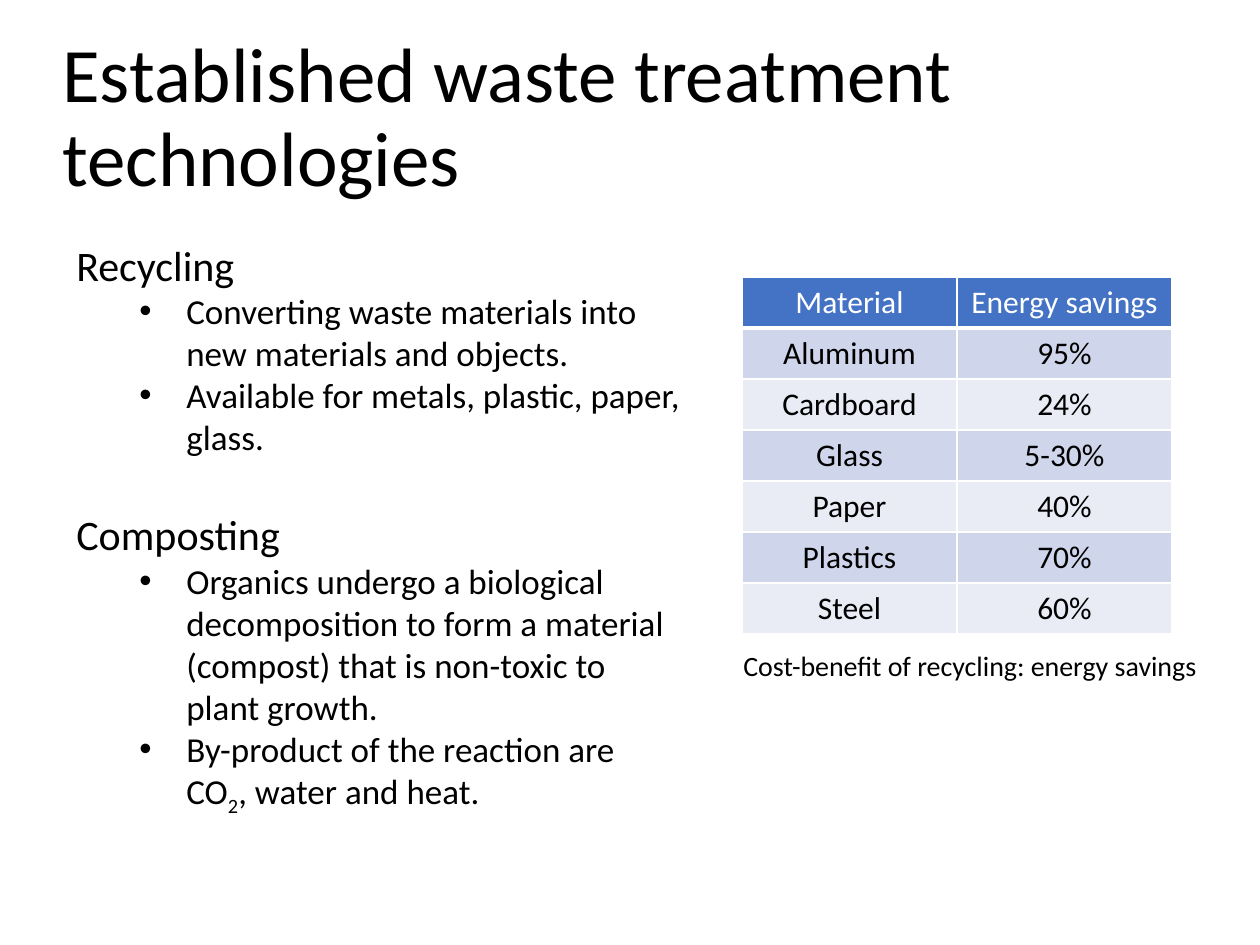
"""Build the slide on established waste treatment technologies."""
from dataclasses import dataclass

from lxml.etree import SubElement
from pptx import Presentation
from pptx.dml.color import RGBColor
from pptx.enum.text import MSO_ANCHOR, PP_ALIGN
from pptx.oxml.ns import qn
from pptx.util import Pt

EMU_PER_PIXEL = 914400 / 126


def px(length):
    return round(length * EMU_PER_PIXEL)


@dataclass(frozen=True)
class Theme:
    font: str = "Calibri"
    text: str = "000000"
    inverse: str = "FFFFFF"
    header: str = "4472C4"
    bands: tuple = ("CFD5EA", "E9EBF5")
    title_size: int = 44
    heading_size: int = 24
    bullet_size: int = 20
    table_size: int = 18
    caption_size: int = 16
    line_spacing: float = 0.9
    section_gap: float = 29.3


class SlideBuilder:
    def __init__(self, slide, theme):
        self.slide = slide
        self.theme = theme

    def style(self, paragraph, size, color=None):
        font = paragraph.font
        font.name = self.theme.font
        font.size = Pt(size)
        font.bold = False
        font.color.rgb = RGBColor.from_string(color or self.theme.text)

    def text_frame(self, left, top, width, height):
        shape = self.slide.shapes.add_textbox(*map(px, (left, top, width, height)))
        shape.text_frame.word_wrap = True
        return shape.text_frame

    def line(self, text, size, *box, indent=0):
        frame = self.text_frame(*box)
        frame.vertical_anchor = MSO_ANCHOR.MIDDLE
        paragraph = frame.paragraphs[0]
        paragraph.text = text
        paragraph.line_spacing = self.theme.line_spacing
        paragraph._p.get_or_add_pPr().set("marL", str(px(indent)))
        self.style(paragraph, size)

    def bullet(self, paragraph, parts):
        properties = paragraph._p.get_or_add_pPr()
        properties.set("marL", str(px(110)))
        properties.set("indent", str(px(-47)))
        SubElement(properties, qn("a:buFont"), typeface="Arial")
        SubElement(properties, qn("a:buChar"), char="•")
        for text, baseline in parts:
            run = paragraph.add_run()
            run.text = text
            if baseline:
                run._r.get_or_add_rPr().set("baseline", str(baseline))
        self.style(paragraph, self.theme.bullet_size)

    def sections(self, sections, *box):
        frame = self.text_frame(*box)
        for index, (heading, bullets) in enumerate(sections):
            paragraph = frame.add_paragraph() if index else frame.paragraphs[0]
            paragraph.text = heading
            if index:
                paragraph.space_before = Pt(self.theme.section_gap)
            self.style(paragraph, self.theme.heading_size)
            for parts in bullets:
                self.bullet(frame.add_paragraph(), parts)

    def borders(self, cell, row):
        properties = cell._tc.get_or_add_tcPr()
        widths = {"L": 1, "R": 1, "T": 3 if row == 1 else 1, "B": 1 if row else 3}
        for side, width in widths.items():
            border = SubElement(properties, qn(f"a:ln{side}"), w=str(Pt(width)))
            fill = SubElement(border, qn("a:solidFill"))
            SubElement(fill, qn("a:srgbClr"), val=self.theme.inverse)

    def table(self, rows, left, top, column_width, row_height):
        theme = self.theme
        columns = len(rows[0])
        size = (columns * column_width, len(rows) * row_height)
        table = self.slide.shapes.add_table(
            len(rows), columns, *map(px, (left, top, *size))
        ).table
        for row, values in enumerate(rows):
            fill = theme.bands[(row - 1) % 2] if row else theme.header
            color = theme.text if row else theme.inverse
            for column, value in enumerate(values):
                cell = table.cell(row, column)
                self.borders(cell, row)
                cell.fill.solid()
                cell.fill.fore_color.rgb = RGBColor.from_string(fill)
                paragraph = cell.text_frame.paragraphs[0]
                paragraph.text = value
                paragraph.alignment = PP_ALIGN.CENTER
                self.style(paragraph, theme.table_size, color)


SECTIONS = [
    ("Recycling", [
        [("Converting waste materials into new materials and objects.", 0)],
        [("Available for metals, plastic, paper, glass.", 0)],
    ]),
    ("Composting", [
        [("Organics undergo a biological decomposition to form a material "
          "(compost) that is non-toxic to plant growth.", 0)],
        [("By-product of the reaction are CO", 0), ("2", -25000),
         (", water and heat.", 0)],
    ]),
]

SAVINGS = [
    ("Material", "Energy savings"),
    ("Aluminum", "95%"),
    ("Cardboard", "24%"),
    ("Glass", "5-30%"),
    ("Paper", "40%"),
    ("Plastics", "70%"),
    ("Steel", "60%"),
]


def main():
    presentation = Presentation()
    presentation.slide_width = px(1260)
    presentation.slide_height = px(945)
    theme = Theme()
    builder = SlideBuilder(
        presentation.slides.add_slide(presentation.slide_layouts[6]), theme
    )
    builder.line("Cost-benefit of recycling: energy savings",
                 theme.caption_size, 731, 634, 503, 67)
    builder.table(SAVINGS, 742, 277, 215, 51)
    builder.sections(SECTIONS, 64, 233, 631, 590)
    builder.line("Established waste treatment technologies",
                 theme.title_size, 0, 28, 1346, 183, indent=50)
    presentation.save("out.pptx")


if __name__ == "__main__":
    main()
